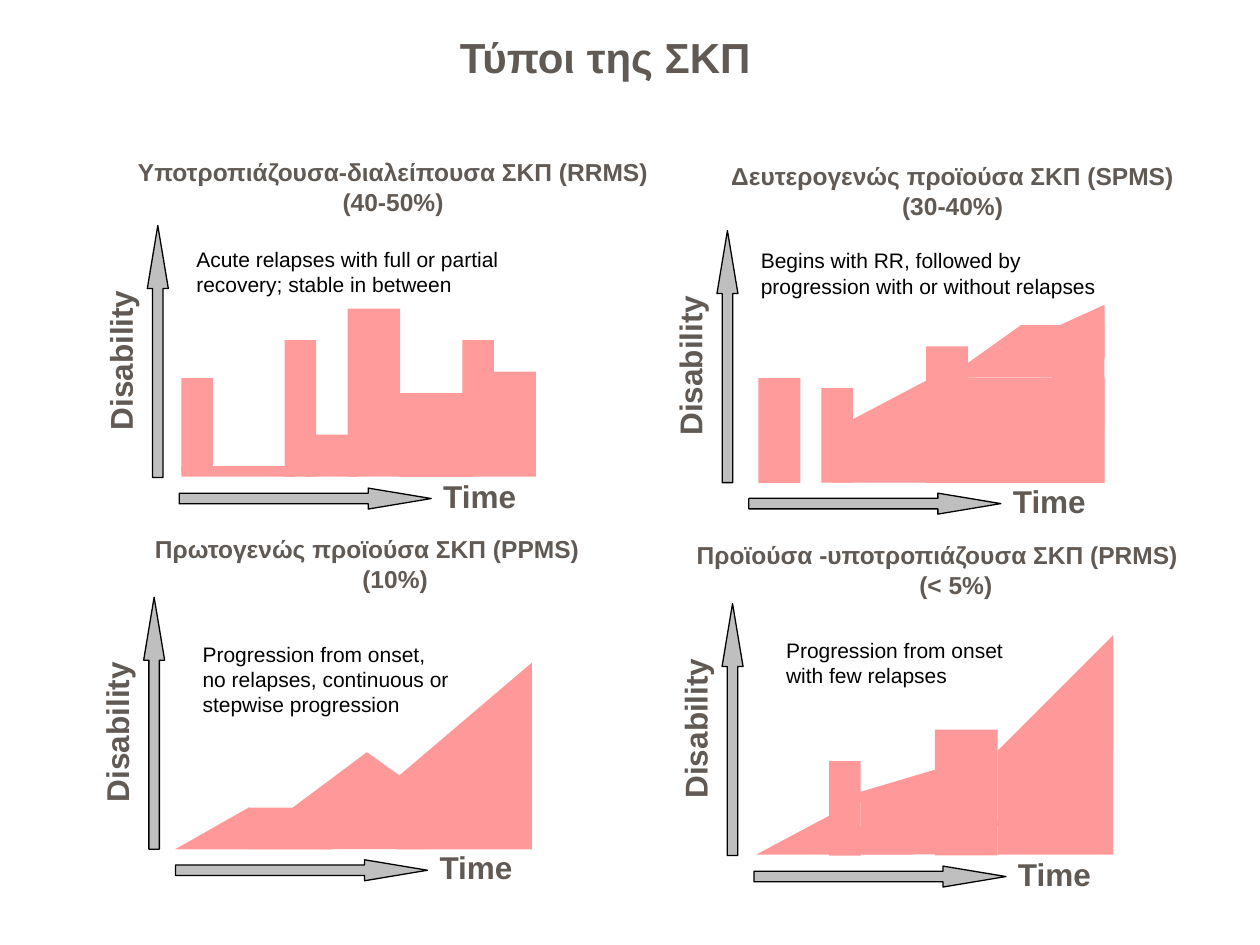
"""Build a slide of four disability-over-time panels for the types of MS."""
from dataclasses import dataclass
from typing import NamedTuple, Optional

from pptx import Presentation
from pptx.dml.color import RGBColor
from pptx.enum.shapes import MSO_SHAPE
from pptx.enum.text import MSO_ANCHOR, MSO_AUTO_SIZE, PP_ALIGN
from pptx.util import Pt

RECT = MSO_SHAPE.RECTANGLE
TRIANGLE = MSO_SHAPE.ISOSCELES_TRIANGLE
RIGHT_TRIANGLE = MSO_SHAPE.RIGHT_TRIANGLE
SLOPED = MSO_SHAPE.FLOWCHART_MANUAL_INPUT
BROWN, BLACK, GREY = "615953", "000000", "BFBFBF"
PINK, LIGHT_PINK = "FF9999", "FF9B9B"


class Box(NamedTuple):
    left: float
    top: float
    width: float
    height: float


class Area(NamedTuple):
    kind: MSO_SHAPE
    box: Box
    apex: Optional[float] = None
    rotation: float = 0
    flip: bool = False


@dataclass
class Panel:
    axis_left: float
    axis_top: float
    heading: tuple[str, ...]
    heading_box: Box
    note: tuple[str, ...]
    note_box: Box
    color: str
    areas: list[Area]
    label_dy: float = 62.6


def bars(*boxes: tuple) -> list[Area]:
    return [Area(RECT, Box(*box)) for box in boxes]


PANELS = [
    Panel(82.1, 341.3, ("Πρωτογενώς προϊούσα ΣΚΠ (PPMS)", "(10%)"), Box(81.4, 301.7, 288.7, 41),
          ("Progression from onset,", "no relapses, continuous or stepwise progression"),
          Box(108.7, 362.9, 180, 50.4), PINK,
          [Area(SLOPED, Box(184.3, 455, 59.8, 30.2)),
           Area(RIGHT_TRIANGLE, Box(226.1, 378.7, 77.8, 66.2), flip=True),
           Area(TRIANGLE, Box(100.1, 461.5, 90, 23.8), 0.467),
           *bars((141.8, 461.5, 48.2, 23.8)),
           Area(TRIANGLE, Box(148.3, 432.7, 95, 31.7), 0.68, 349.4),
           *bars((226.1, 443.5, 77.8, 41.8))]),
    Panel(412.6, 344.9, ("Προϊούσα -υποτροπιάζουσα ΣΚΠ (PRMS)", "(< 5%)"),
          Box(391, 305.3, 310.3, 41),
          ("Progression from onset", "with few relapses"), Box(442.1, 360.7, 185.8, 36), PINK,
          [Area(SLOPED, Box(491.8, 446.4, 59.8, 41.8)),
           *bars((534.2, 416.9, 36, 72), (570.2, 428.4, 66, 60), (473.8, 434.9, 18, 54)),
           Area(TRIANGLE, Box(432, 464.4, 90, 24), 0.5),
           Area(TRIANGLE, Box(570.2, 362.9, 66, 66), 1),
           Area(TRIANGLE, Box(481, 432.7, 95, 31.7), 0.68, 9.6)], 56.9),
    Panel(409.7, 131.8, ("Δευτερογενώς προϊούσα ΣΚΠ (SPMS) (30-40%)",),
          Box(409, 88.6, 270.7, 41),
          ("Begins with RR, followed by", "progression with or without relapses"),
          Box(427.7, 138.2, 216, 36), LIGHT_PINK,
          [Area(TRIANGLE, Box(565.2, 174.2, 66, 30), 1),
           *bars((433.4, 216, 24, 60), (469.4, 221.8, 18, 54)),
           Area(TRIANGLE, Box(475.2, 216, 114, 30), 0.5),
           *bars((529.2, 198, 24, 78)),
           Area(TRIANGLE, Box(541.4, 185.8, 84, 30), 0.5),
           *bars((475.2, 239.8, 54, 36), (547.2, 216, 84, 60),
                 (583.2, 185.8, 30, 24), (601.2, 185.8, 30, 60))]),
    Panel(84.2, 128.9, ("Υποτροπιάζουσα-διαλείπουσα ΣΚΠ (RRMS) (40-50%)",),
          Box(69.1, 86.4, 311, 41),
          ("Acute relapses with full or partial recovery; stable in between",),
          Box(105.1, 137.5, 222.5, 36), LIGHT_PINK,
          bars((103.7, 216, 18, 54), (162.7, 194.4, 18, 78), (198.7, 176.4, 30, 96),
               (264.2, 194.4, 18, 78), (282.2, 212.4, 24, 60), (228.2, 224.6, 42, 48),
               (174.2, 248.4, 30, 24), (103.7, 266.4, 64.8, 6))),
]


def rgb(color: str) -> RGBColor:
    return RGBColor.from_string(color)


def write(sp, lines: tuple[str, ...], size: float, color: str, bold: bool, wrap: bool = True):
    tf = sp.text_frame
    tf.text = "\n".join(lines)
    tf.word_wrap = wrap
    tf.auto_size = MSO_AUTO_SIZE.SHAPE_TO_FIT_TEXT
    for p in tf.paragraphs:
        p.font.name = "Arial"
        p.font.size = Pt(size)
        p.font.bold = bold
        p.font.color.rgb = rgb(color)
    return tf


def add_text(s, box: Box, lines: tuple[str, ...], size: float, color: str = BROWN,
             bold: bool = True, wrap: bool = True, rotation: float = 0):
    sp = s.shapes.add_textbox(*map(Pt, box))
    sp.rotation = rotation
    return write(sp, lines, size, color, bold, wrap)


def add_filled(s, kind: MSO_SHAPE, box: Box, color: str, rotation: float = 0):
    sp = s.shapes.add_shape(kind, *map(Pt, box))
    sp.shadow.inherit = False
    sp.rotation = rotation
    sp.fill.solid()
    sp.fill.fore_color.rgb = rgb(color)
    sp.line.fill.background()
    return sp


def add_arrow(s, left: float, top: float, rotation: float = 0) -> None:
    sp = add_filled(s, MSO_SHAPE.UP_ARROW, Box(left, top, 12, 144), GREY, rotation)
    sp.adjustments[0], sp.adjustments[1] = 0.5, 3
    sp.line.color.rgb = rgb(BLACK)
    sp.line.width = Pt(0.75)


def add_area(s, area: Area, color: str) -> None:
    sp = add_filled(s, area.kind, area.box, color, area.rotation)
    if area.apex is not None:
        sp.adjustments[0] = area.apex
    if area.flip:
        sp.element.spPr.xfrm.set("flipH", "1")


def add_panel(s, panel: Panel) -> None:
    x, y = panel.axis_left, panel.axis_top
    tf = add_text(s, panel.heading_box, panel.heading, 14)
    tf.paragraphs[-1].alignment = PP_ALIGN.CENTER
    add_arrow(s, x, y)
    add_arrow(s, x + 84.2, y + 84, 90)
    add_text(s, Box(x - 62.6, y + panel.label_dy, 94.3, 28.8), ("Disability",), 18,
             wrap=False, rotation=270)
    add_text(s, Box(x + 162, y + 140, 56.2, 28.8), ("Time",), 18)
    for area in panel.areas:
        add_area(s, area, panel.color)
    add_text(s, panel.note_box, panel.note, 12, BLACK, bold=False)


def add_title(s, text: str) -> None:
    sp = s.shapes.title
    sp.left, sp.top, sp.width, sp.height = map(Pt, Box(19.4, 16.6, 653, 34.6))
    tf = write(sp, (text,), 24, BROWN, True)
    tf.vertical_anchor = MSO_ANCHOR.BOTTOM
    p = tf.paragraphs[0]
    p.alignment = PP_ALIGN.CENTER
    p.line_spacing = 0.95


def main() -> None:
    prs = Presentation()
    prs.slide_width, prs.slide_height = Pt(720), Pt(540)
    s = prs.slides.add_slide(prs.slide_layouts[5])
    add_title(s, "Τύποι της ΣΚΠ")
    for panel in PANELS:
        add_panel(s, panel)
    prs.save("out.pptx")


if __name__ == "__main__":
    main()
